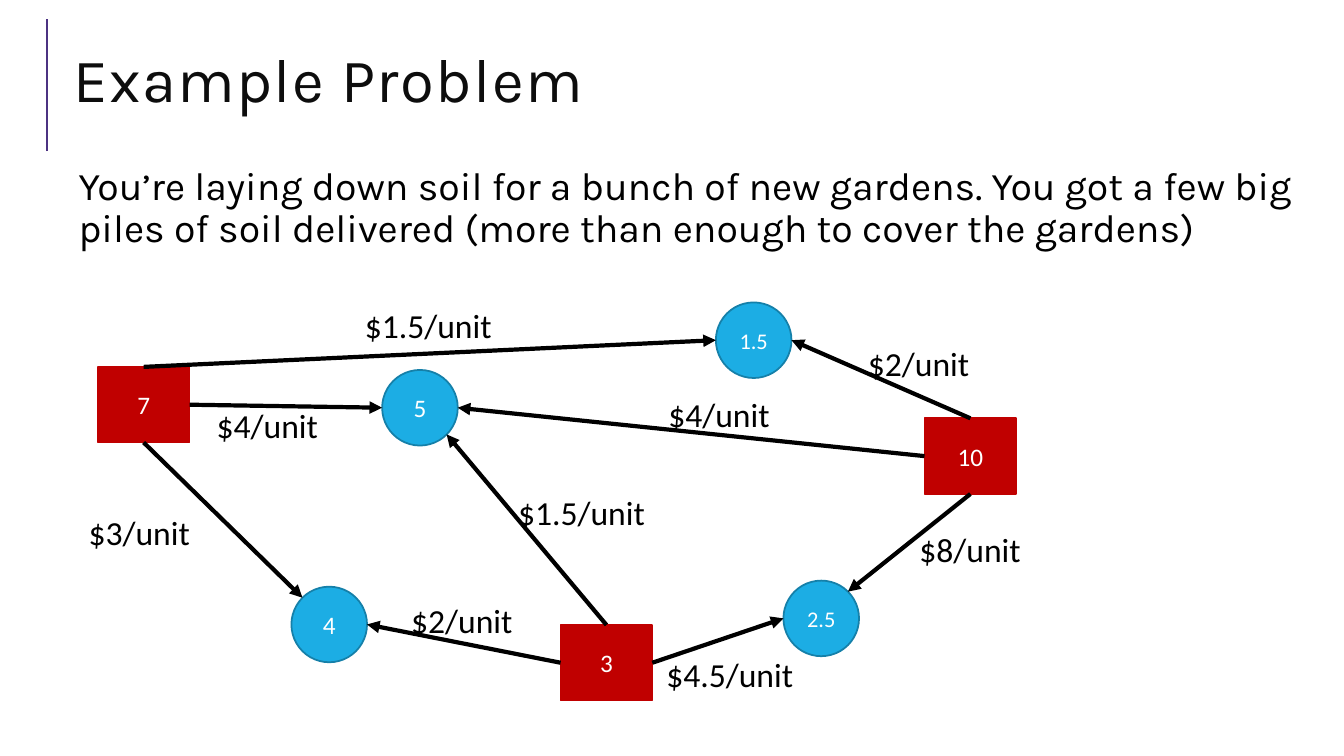
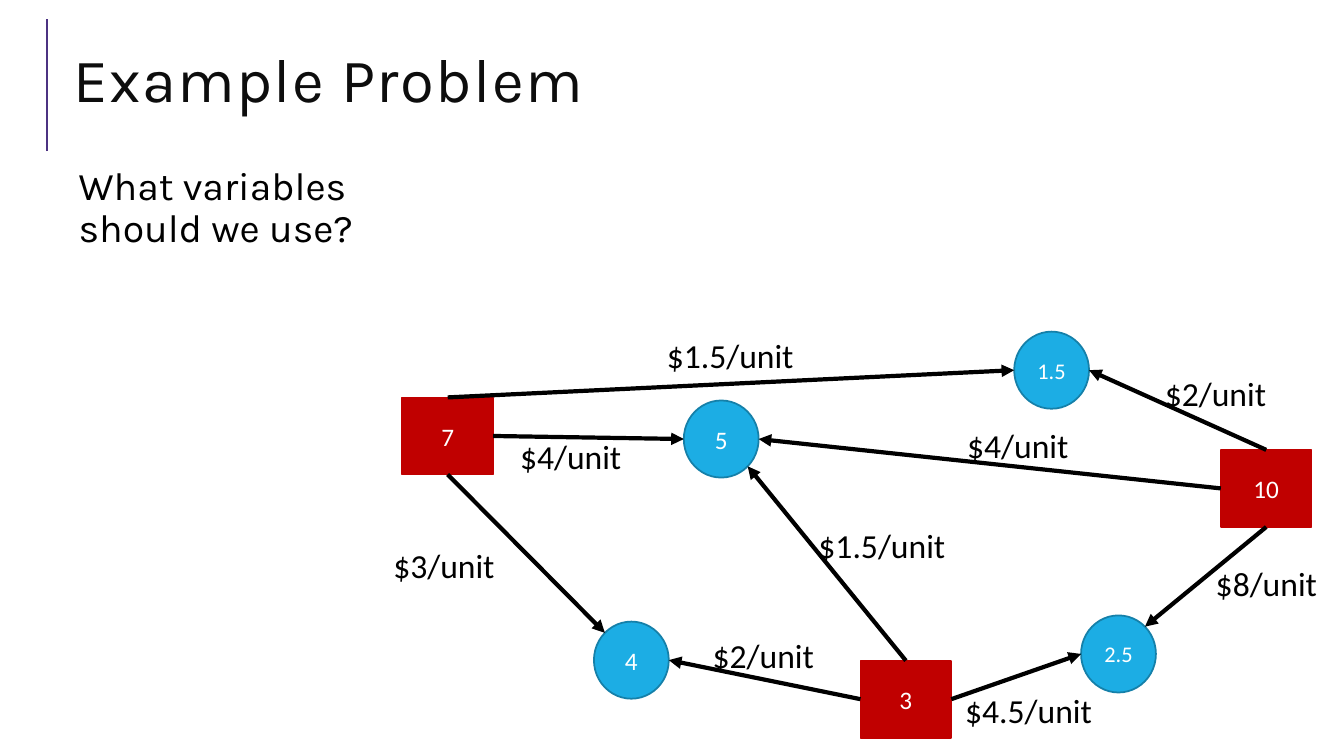
"""Build two slides showing a soil transport network with unit costs."""
import math
from lxml import etree
from pptx import Presentation, util as u
from pptx.dml.color import RGBColor
from pptx.enum import shapes, text
from pptx.oxml.ns import qn

WIDTH, HEIGHT = 13.33, 7.5
COLORS = {"rule": "4C3282", "title": "0D0D0D", "text": "000000", "white": "FFFFFF",
          "pile": "C00000", "garden": "1CADE4", "garden_edge": "1580A9"}
HEAD_FONT, NODE_FONT = "Karla", "Calibri"
TITLE = "Example Problem"
SLIDES = [
    {"body": "You’re laying down soil for a bunch of new gardens. You got a few big piles "
             "of soil delivered (more than enough to cover the gardens)",
     "body_size": (12.23, 2), "offset": (0, 0), "scale": (1, 1)},
    {"body": "What variables should we use?",
     "body_size": (3.19, 5.3), "offset": (3.03, 0.23), "scale": (0.99, 1.02)},
]

PILE_SIZE, GARDEN_SIZE, LABEL_SIZE = (0.91, 0.75), (0.75, 0.75), (1.48, 0.5)
PILES = {"7": (0.97, 3.64), "3": (5.56, 6.2), "10": (9.17, 4.15)}
GARDENS = {"5": (3.79, 3.67), "4": (2.89, 5.82), "1.5": (7.1, 3), "2.5": (7.77, 5.76)}
TOP, LEFT, BOTTOM, RIGHT = range(4)
ANGLES = {"E": 0, "SE": 45, "W": 180, "NW": 225, "NE": 315}
ROUTES = [
    ("7", RIGHT, "5", "W", "$4/unit", (2.05, 3.97)),
    ("7", TOP, "1.5", "W", "$1.5/unit", (3.52, 2.98)),
    ("7", BOTTOM, "4", "NW", "$3/unit", (0.78, 5.03)),
    ("3", LEFT, "4", "E", "$2/unit", (3.98, 5.9)),
    ("3", TOP, "5", "SE", "$1.5/unit", (5.04, 4.83)),
    ("3", RIGHT, "2.5", "W", "$4.5/unit", (6.51, 6.44)),
    ("10", TOP, "1.5", "E", "$2/unit", (8.51, 3.35)),
    ("10", BOTTOM, "2.5", "NE", "$8/unit", (9.02, 5.2)),
    ("10", LEFT, "5", "E", "$4/unit", (6.53, 3.86)),
]


def rgb(name):
    return RGBColor.from_string(COLORS[name])


def write(sp, words, size, font, color, anchor=text.MSO_ANCHOR.TOP):
    tf = sp.text_frame
    tf.word_wrap = True
    tf.vertical_anchor = anchor
    p = tf.paragraphs[0]
    r = p.add_run()
    r.text = words
    r.font.size, r.font.name = u.Pt(size), font
    r.font.color.rgb = rgb(color)
    return tf, p, r


def add_text(s, box, *style):
    return write(s.shapes.add_textbox(*map(u.Inches, box)), *style)


def add_line(s, start, end, color, width):
    line = s.shapes.add_connector(shapes.MSO_CONNECTOR.STRAIGHT,
                                  *map(u.Inches, (*start, *end)))
    line.line.color.rgb, line.line.width = rgb(color), u.Pt(width)
    etree.SubElement(line._element.spPr, qn("a:effectLst"))
    return line


def add_heading(s, body, body_size):
    add_line(s, (0.47, 1.5), (0.47, 0.19), "rule", 1.5)
    tf, p, r = add_text(s, (0.63, 0.29, 12.23, 1.11), TITLE, 44, HEAD_FONT, "title",
                        text.MSO_ANCHOR.MIDDLE)
    p.line_spacing = 0.8
    r._r.get_or_add_rPr().set("spc", "100")
    tf, p, r = add_text(s, (0.63, 1.6, *body_size), body, 28, HEAD_FONT, "text")
    tf.margin_left = tf.margin_right = tf.margin_top = tf.margin_bottom = u.Inches(0.05)
    p.line_spacing, p.space_before, p.space_after = 0.9, u.Pt(12), u.Pt(2)
    p._p.get_or_add_pPr().set("marL", str(u.Inches(0.1)))


def add_node(s, kind, box, amount, fill, edge):
    sp = s.shapes.add_shape(kind, *map(u.Inches, box))
    sp.shadow.inherit = False
    sp.fill.solid()
    sp.fill.fore_color.rgb = rgb(fill)
    sp.line.color.rgb, sp.line.width = rgb(edge), u.Pt(1.25)
    size = 16 if "." in amount else 18
    tf, p, r = write(sp, amount, size, NODE_FONT, "white", text.MSO_ANCHOR.MIDDLE)
    p.alignment = text.PP_ALIGN.CENTER
    return sp


def add_network(s, offset, scale):
    def place(at, size):
        (x, y), (w, h), (dx, dy), (kx, ky) = at, size, offset, scale
        return dx + kx * x, dy + ky * y, kx * w, ky * h

    piles = {amount: add_node(s, shapes.MSO_SHAPE.RECTANGLE, place(at, PILE_SIZE),
                              amount, "pile", "pile")
             for amount, at in PILES.items()}
    for amount, at in GARDENS.items():
        add_node(s, shapes.MSO_SHAPE.OVAL, place(at, GARDEN_SIZE),
                 amount, "garden", "garden_edge")

    for pile, side, garden, compass, cost, label_at in ROUTES:
        x, y, w, h = place(GARDENS[garden], GARDEN_SIZE)
        angle = math.radians(ANGLES[compass])
        end = x + w / 2 * (1 + math.cos(angle)), y + h / 2 * (1 + math.sin(angle))
        arrow = add_line(s, end, end, "text", 3)
        arrow.begin_connect(piles[pile], side)
        etree.SubElement(arrow.line._get_or_add_ln(), qn("a:tailEnd"), type="triangle")
        add_text(s, place(label_at, LABEL_SIZE), cost, 24, NODE_FONT, "text")


def main():
    prs = Presentation()
    prs.slide_width, prs.slide_height = u.Inches(WIDTH), u.Inches(HEIGHT)
    for content in SLIDES:
        s = prs.slides.add_slide(prs.slide_layouts[6])
        add_heading(s, content["body"], content["body_size"])
        add_network(s, content["offset"], content["scale"])
    prs.save("out.pptx")


if __name__ == "__main__":
    main()
